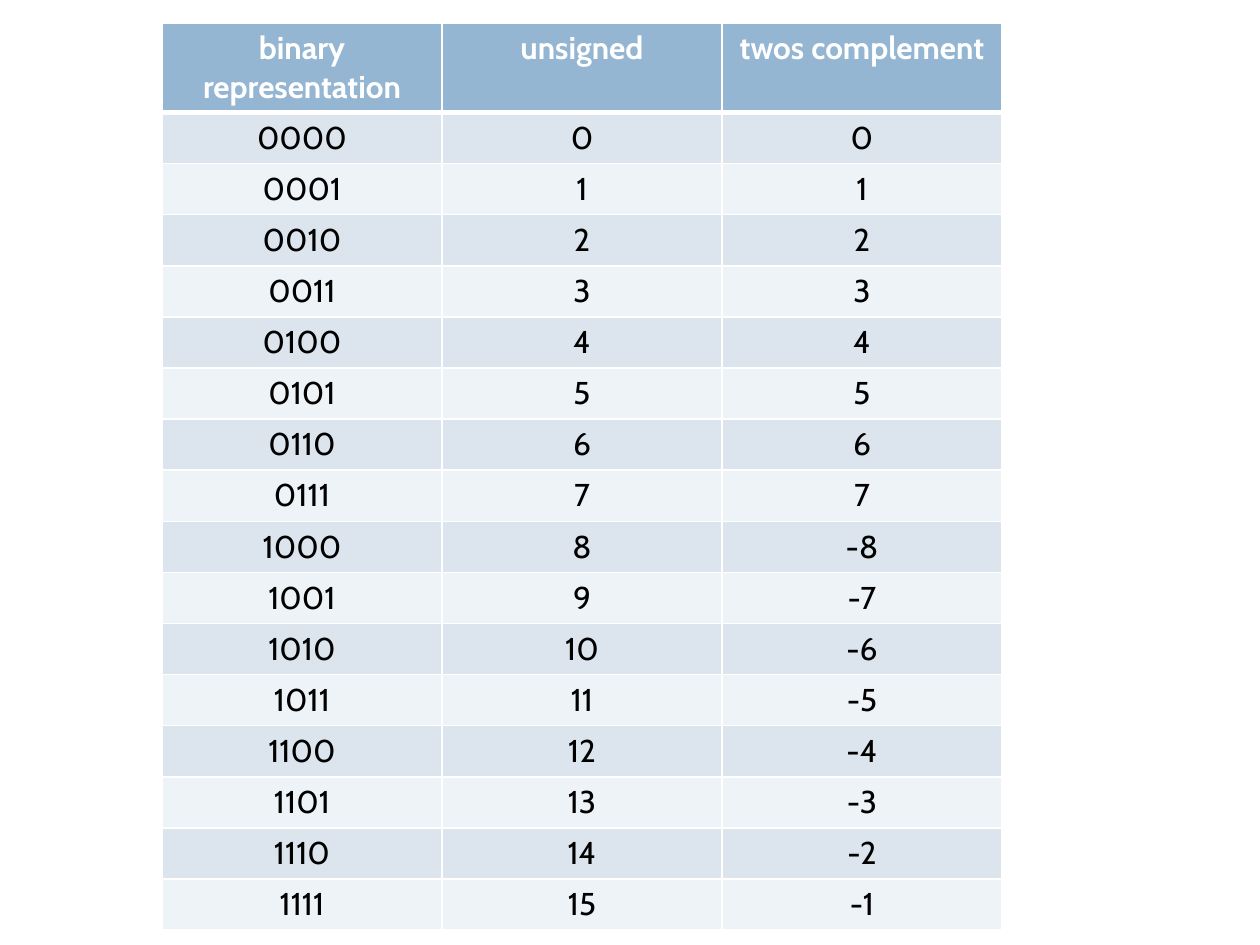
from dataclasses import dataclass

from lxml import etree
from pptx import Presentation
from pptx.dml.color import RGBColor
from pptx.enum.text import PP_ALIGN
from pptx.oxml.ns import qn
from pptx.util import Pt

CENTER = PP_ALIGN.CENTER
BLANK_LAYOUT = 6
BITS = 4

HEADINGS = ("binary representation", "unsigned", "twos complement")
NUMBERS = [
    (f"{n:0{BITS}b}", str(n), str(n if n < 2 ** (BITS - 1) else n - 2 ** BITS))
    for n in range(2 ** BITS)
]

PX = 914400 // 126
SLIDE_WIDTH, SLIDE_HEIGHT = 1260, 945
LEFT, TOP, WIDTH, HEIGHT = 162, 23, 840, 906
HEADING_HEIGHT = 89


@dataclass(frozen=True)
class Theme:
    font: str = "Cabin"
    size: int = 18
    heading_fill: str = "94B6D2"
    heading_text: str = "FFFFFF"
    bands: tuple = ("DCE5EE", "EEF3F7")
    number_text: str = "000000"
    rule: str = "FFFFFF"
    thin: int = 1
    thick: int = 3


THEME = Theme()


def draw_borders(cell, top, bottom):
    properties = cell._tc.get_or_add_tcPr()
    widths = {"a:lnL": THEME.thin, "a:lnR": THEME.thin, "a:lnT": top, "a:lnB": bottom}
    for side, width in widths.items():
        line = etree.SubElement(properties, qn(side), w=str(Pt(width)))
        fill = etree.SubElement(line, qn("a:solidFill"))
        etree.SubElement(fill, qn("a:srgbClr"), val=THEME.rule)


def write_cell(cell, words, fill, colour, bold, top, bottom):
    draw_borders(cell, top, bottom)
    cell.fill.solid()
    cell.fill.fore_color.rgb = RGBColor.from_string(fill)
    paragraph = cell.text_frame.paragraphs[0]
    paragraph.alignment = CENTER
    run = paragraph.add_run()
    run.text = words
    run.font.name = THEME.font
    run.font.size = Pt(THEME.size)
    run.font.bold = bold
    run.font.color.rgb = RGBColor.from_string(colour)


def add_number_table(slide):
    contents = [HEADINGS, *NUMBERS]
    table = slide.shapes.add_table(
        len(contents), len(HEADINGS), LEFT * PX, TOP * PX, WIDTH * PX, HEIGHT * PX
    ).table
    for column in table.columns:
        column.width = WIDTH * PX // len(HEADINGS)
    number_height = (HEIGHT - HEADING_HEIGHT) * PX // len(NUMBERS)
    for index, row in enumerate(contents):
        heading = index == 0
        table.rows[index].height = HEADING_HEIGHT * PX if heading else number_height
        fill = THEME.heading_fill if heading else THEME.bands[(index - 1) % 2]
        colour = THEME.heading_text if heading else THEME.number_text
        top = THEME.thick if index == 1 else THEME.thin
        bottom = THEME.thick if heading else THEME.thin
        for position, words in enumerate(row):
            write_cell(table.cell(index, position), words, fill, colour, heading, top, bottom)


def main():
    deck = Presentation()
    deck.slide_width = SLIDE_WIDTH * PX
    deck.slide_height = SLIDE_HEIGHT * PX
    add_number_table(deck.slides.add_slide(deck.slide_layouts[BLANK_LAYOUT]))
    deck.save("out.pptx")


if __name__ == "__main__":
    main()
